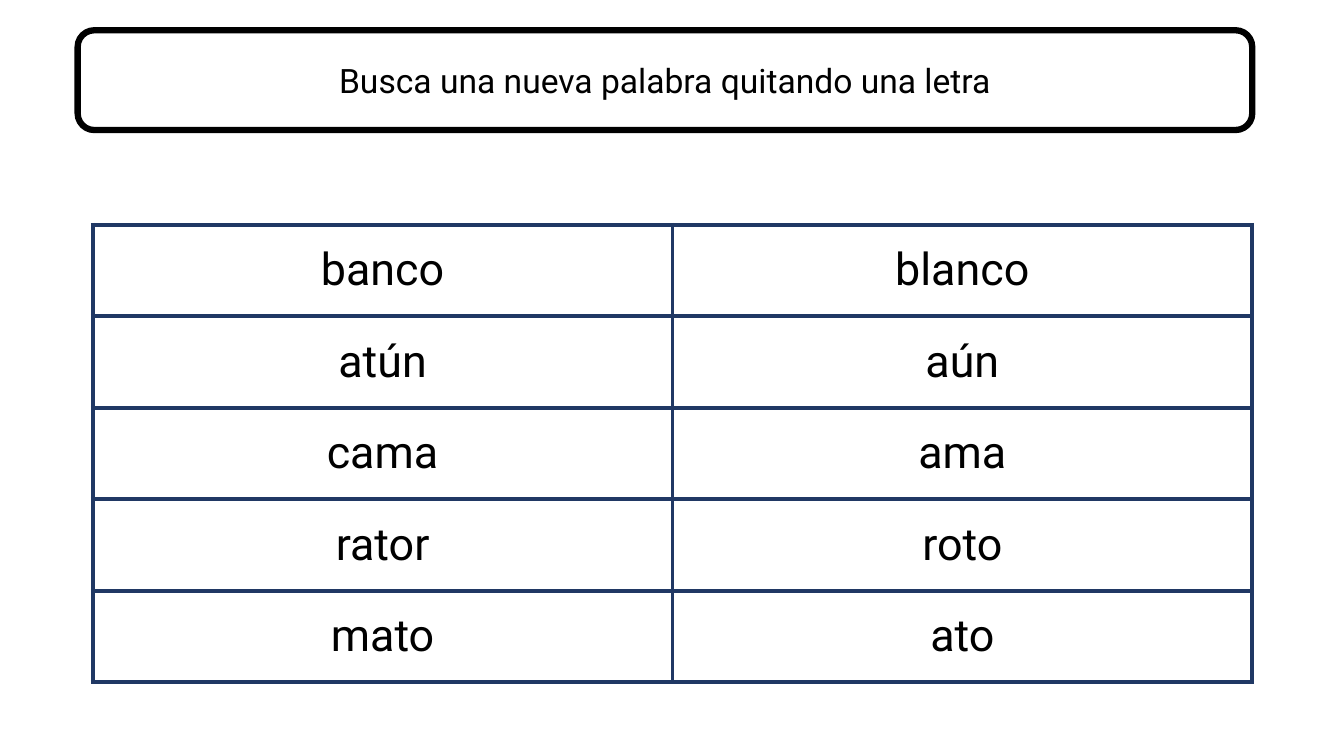
from pptx import Presentation, util as u
from pptx.dml.color import RGBColor
from pptx.enum import shapes, text
from pptx.oxml import parse_xml
from pptx.oxml.ns import nsdecls

WORDS = [
    ("banco", "blanco"),
    ("atún", "aún"),
    ("cama", "ama"),
    ("rator", "roto"),
    ("mato", "ato"),
]


def color(hex):
    """Turn a hex string into a colour."""
    return RGBColor.from_string(hex)


def paint(item, hex):
    """Give a shape or cell a solid fill."""
    item.fill.solid()
    item.fill.fore_color.rgb = color(hex)


def write(frame, words, size):
    """Write one centred line of black text."""
    frame.text = words
    line = frame.paragraphs[0]
    line.alignment = text.PP_ALIGN.CENTER
    font = line.runs[0].font
    for name, value in {"name": "Roboto", "size": u.Pt(size), "bold": False}.items():
        setattr(font, name, value)
    font.color.rgb = color("000000")


def edge(cell, hex, width):
    """Draw the four borders of a cell."""
    props = cell._tc.get_or_add_tcPr()
    for spot, side in enumerate("LRTB"):
        props.insert(spot, parse_xml(
            f'<a:ln{side} {nsdecls("a")} w="{u.Pt(width)}"><a:solidFill>'
            f'<a:srgbClr val="{hex}"/></a:solidFill></a:ln{side}>'))


def banner(slide, words, box):
    """Place the title inside a rounded frame."""
    frame = slide.shapes.add_shape(shapes.MSO_SHAPE.ROUNDED_RECTANGLE, *box)
    frame.shadow.inherit = False
    paint(frame, "FFFFFF")
    frame.line.color.rgb = color("000000")
    frame.line.width = u.Pt(4.5)
    title = slide.shapes.title
    for name, value in zip(("left", "top", "width", "height"), box):
        setattr(title, name, value)
    slide.shapes._spTree.append(title._element)
    write(title.text_frame, words, 24)
    title.text_frame.vertical_anchor = text.MSO_ANCHOR.MIDDLE


def grid(slide, rows, box):
    """Fill a bordered table with word pairs."""
    table = slide.shapes.add_table(len(rows), len(rows[0]), *box).table
    table.first_row = table.horz_banding = False
    for r, row in enumerate(rows):
        for c, word in enumerate(row):
            cell = table.cell(r, c)
            paint(cell, "FFFFFF")
            edge(cell, "203864", 3)
            write(cell.text_frame, word, 32)
            cell.vertical_anchor = text.MSO_ANCHOR.MIDDLE


def main():
    """Build and save the slide."""
    deck = Presentation()
    deck.slide_width, deck.slide_height = u.Inches(13.33), u.Inches(7.5)
    slide = deck.slides.add_slide(deck.slide_layouts.get_by_name("Title Only"))
    banner(slide, "Busca una nueva palabra quitando una letra",
           [u.Inches(n) for n in (0.77, 0.3, 11.65, 0.99)])
    grid(slide, WORDS, [u.Inches(n) for n in (0.92, 2.23, 11.5, 4.54)])
    deck.save("out.pptx")


if __name__ == "__main__":
    main()
